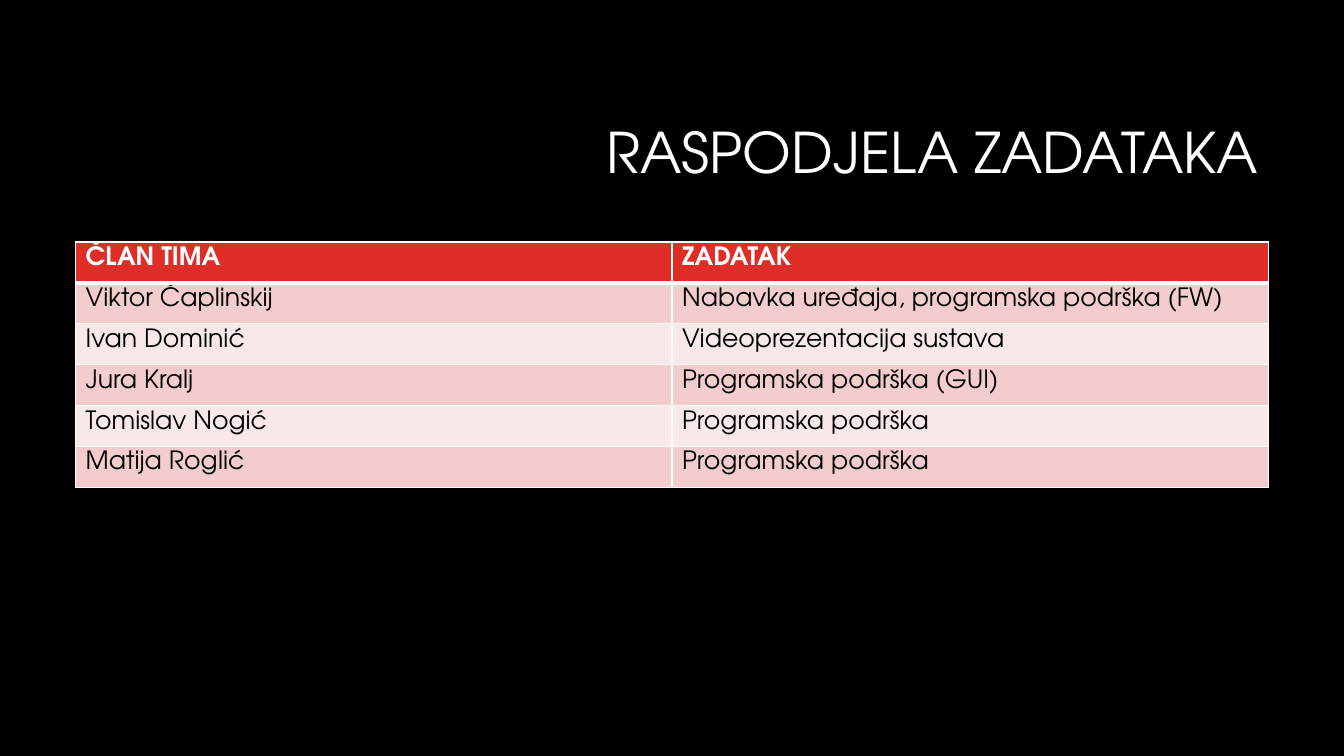
from lxml import etree
from pptx import Presentation
from pptx.dml.color import RGBColor
from pptx.enum.text import MSO_ANCHOR, PP_ALIGN
from pptx.oxml.ns import qn
from pptx.util import Pt

MIDDLE = MSO_ANCHOR.MIDDLE
LEFT, RIGHT = PP_ALIGN.LEFT, PP_ALIGN.RIGHT

FONT = "TeX Gyre Adventor"
BLACK, WHITE, RED = "000000", "FFFFFF", "DF2E28"
BANDS = ("F3CDCD", "F9E8E8")

TITLE_BOX = (228, 60.5, 678, 101.5)
TABLE_BOX = (54, 172.8, 852, 175.2)
ASSIGNMENTS = [
    ("ČLAN TIMA", "ZADATAK"),
    ("Viktor Čaplinskij", "Nabavka uređaja, programska podrška (FW)"),
    ("Ivan Dominić", "Videoprezentacija sustava"),
    ("Jura Kralj", "Programska podrška (GUI)"),
    ("Tomislav Nogić", "Programska podrška"),
    ("Matija Roglić", "Programska podrška"),
]


def color(value):
    return RGBColor.from_string(value)


def paint(fill, value):
    fill.solid()
    fill.fore_color.rgb = color(value)


def write(frame, text, size=18, ink=BLACK, bold=False, align=LEFT, spacing=1.0):
    paragraph = frame.paragraphs[0]
    paragraph.alignment = align
    paragraph.line_spacing = spacing
    run = paragraph.add_run()
    run.text = text
    run.font.name = FONT
    run.font.size = Pt(size)
    run.font.bold = bold
    run.font.color.rgb = color(ink)


def set_borders(cell, top=1, bottom=1):
    """Put white borders, in points, ahead of the fill in the cell properties."""
    properties = cell._tc.get_or_add_tcPr()
    widths = {"a:lnL": 1, "a:lnR": 1, "a:lnT": top, "a:lnB": bottom}
    for position, (side, width) in enumerate(widths.items()):
        line = etree.Element(qn(side), w=str(Pt(width)))
        fill = etree.SubElement(line, qn("a:solidFill"))
        etree.SubElement(fill, qn("a:srgbClr"), val=WHITE)
        properties.insert(position, line)


def add_title(slide, box, text):
    title = slide.shapes.title
    title.left, title.top, title.width, title.height = map(Pt, box)
    frame = title.text_frame
    frame.word_wrap = True
    frame.vertical_anchor = MIDDLE
    write(frame, text, size=40, ink=WHITE, align=RIGHT, spacing=0.9)


def add_assignments(slide, box, rows):
    left, top, width, height = box
    column_count = len(rows[0])
    table = slide.shapes.add_table(
        len(rows), column_count, Pt(left), Pt(top), Pt(width), Pt(height)).table
    for column in table.columns:
        column.width = Pt(width / column_count)
    for r, texts in enumerate(rows):
        table.rows[r].height = Pt(height / len(rows))
        header = r == 0
        for c, text in enumerate(texts):
            cell = table.cell(r, c)
            paint(cell.fill, RED if header else BANDS[(r - 1) % 2])
            set_borders(cell, top=3 if r == 1 else 1, bottom=3 if header else 1)
            write(cell.text_frame, text, ink=WHITE if header else BLACK, bold=header)


def main():
    deck = Presentation()
    deck.slide_width, deck.slide_height = Pt(960), Pt(540)
    slide = deck.slides.add_slide(deck.slide_layouts[5])
    paint(slide.background.fill, BLACK)
    add_title(slide, TITLE_BOX, "RASPODJELA ZADATAKA")
    add_assignments(slide, TABLE_BOX, ASSIGNMENTS)
    deck.save("out.pptx")


if __name__ == "__main__":
    main()
